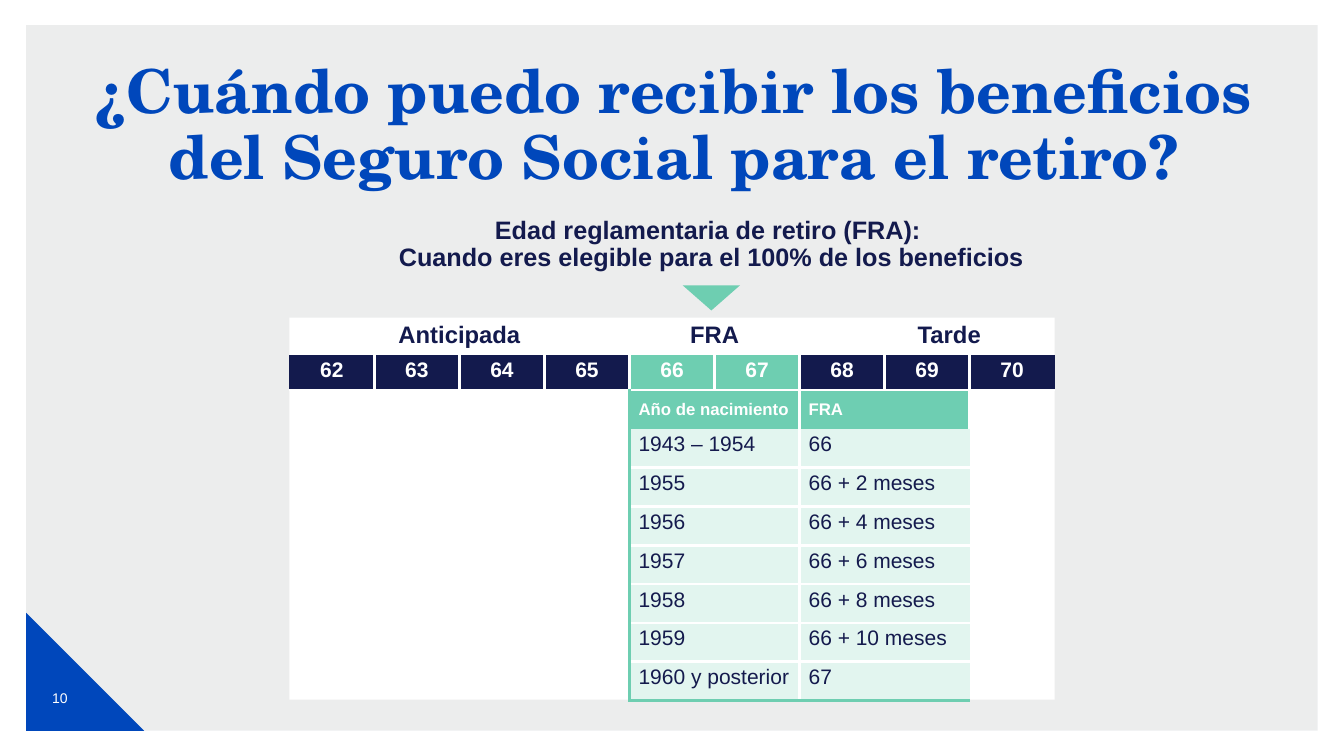
import pptx
import pptx.util
import pptx.dml.color
import pptx.enum.shapes
import pptx.enum.text
import pptx.oxml.ns
import lxml.etree

Inches = pptx.util.Inches
Pt = pptx.util.Pt
RGBColor = pptx.dml.color.RGBColor
Shape = pptx.enum.shapes.MSO_SHAPE
Align = pptx.enum.text.PP_ALIGN
Anchor = pptx.enum.text.MSO_ANCHOR
qn = pptx.oxml.ns.qn

BLUE = RGBColor(0x00, 0x47, 0xBB)
NAVY = RGBColor(0x13, 0x1A, 0x4D)
INK = RGBColor(0x14, 0x1A, 0x4D)
GREEN = RGBColor(0x6E, 0xCE, 0xB1)
HEAD = RGBColor(0x6E, 0xCE, 0xB2)
MINT = RGBColor(0xE2, 0xF5, 0xEF)
GREY = RGBColor(0xD0, 0xD3, 0xD4)
WHITE = RGBColor(0xFF, 0xFF, 0xFF)

AGES = range(62, 71)
FULL = (66, 67)
BIRTHS = [
    ("1943 – 1954", "66"),
    ("1955", "66 + 2 meses"),
    ("1956", "66 + 4 meses"),
    ("1957", "66 + 6 meses"),
    ("1958", "66 + 8 meses"),
    ("1959", "66 + 10 meses"),
    ("1960 y posterior", "67"),
]


def apply(item, values):
    for key, value in values.items():
        setattr(item, key, value)


class Deck:
    font = "Arial"
    serif = "TeX Gyre Schola"
    rule = Pt(2.25)

    def __init__(self):
        self.file = pptx.Presentation()
        apply(self.file, {"slide_width": Inches(13.33), "slide_height": Inches(7.5)})
        self.slide = self.file.slides.add_slide(self.file.slide_layouts[5])

    def words(self, frame, text, size, color, bold=True, name=None, align=Align.CENTER, space=None):
        frame.text = text
        for para in frame.paragraphs:
            apply(para, {"alignment": align, "line_spacing": space})
            for run in para.runs:
                apply(run.font, {"name": name or self.font, "size": Pt(size), "bold": bold})
                run.font.color.rgb = color

    def frame(self, frame, anchor, side=0):
        apply(frame, {
            "word_wrap": True,
            "auto_size": pptx.enum.text.MSO_AUTO_SIZE.NONE,
            "vertical_anchor": anchor,
            "margin_left": Inches(side),
            "margin_right": Inches(side),
            "margin_top": Inches(0.05),
            "margin_bottom": Inches(0.05),
        })

    def title(self, text, x, y, w, h):
        box = self.slide.shapes.title
        apply(box, {"left": Inches(x), "top": Inches(y), "width": Inches(w), "height": Inches(h)})
        self.slide.shapes.element.append(box.element)
        self.frame(box.text_frame, Anchor.TOP)
        self.words(box.text_frame, text, 43.2, BLUE, name=self.serif, space=0.9)

    def text(self, text, x, y, w, h, size, color, bold=True, anchor=Anchor.TOP, side=0, space=None):
        box = self.slide.shapes.add_textbox(Inches(x), Inches(y), Inches(w), Inches(h))
        self.frame(box.text_frame, anchor, side)
        self.words(box.text_frame, text, size, color, bold, space=space)

    def shape(self, kind, x, y, w, h, color, alpha=None, turn=0):
        item = self.slide.shapes.add_shape(kind, Inches(x), Inches(y), Inches(w), Inches(h))
        item.shadow.inherit = False
        item.rotation = turn
        item.fill.solid()
        item.fill.fore_color.rgb = color
        item.line.fill.background()
        if alpha:
            tint = item.element.spPr.find(qn("a:solidFill"))[0]
            lxml.etree.SubElement(tint, qn("a:alpha"), val=str(alpha * 1000))

    def line(self, x1, y1, x2, y2, color):
        kind = pptx.enum.shapes.MSO_CONNECTOR.STRAIGHT
        item = self.slide.shapes.add_connector(kind, Inches(x1), Inches(y1), Inches(x2), Inches(y2))
        item.line.color.rgb = color
        item.line.width = self.rule
        lxml.etree.SubElement(item.element.spPr, qn("a:effectLst"))

    def table(self, x, y, widths, heights):
        item = self.slide.shapes.add_table(
            len(heights), len(widths), Inches(x), Inches(y), Inches(sum(widths)), Inches(sum(heights)))
        self.grid = item.table
        apply(self.grid, {"first_row": False, "horz_banding": False})
        for col, width in zip(self.grid.columns, widths):
            col.width = Inches(width)
        for row, height in zip(self.grid.rows, heights):
            row.height = Inches(height)

    def edge(self, cell, sides):
        props = cell._tc.get_or_add_tcPr()
        for side in "LRTB":
            line = lxml.etree.SubElement(props, qn("a:ln" + side), w=str(int(self.rule)))
            if side in sides:
                fill = lxml.etree.SubElement(line, qn("a:solidFill"))
                lxml.etree.SubElement(fill, qn("a:srgbClr"), val=str(sides[side]))
            else:
                lxml.etree.SubElement(line, qn("a:noFill"))

    def cell(self, row, col, text="", rows=1, cols=1, fill=None, sides={}, size=15, color=WHITE,
             bold=True, align=Align.CENTER, anchor=Anchor.TOP, pad=0.04, left=0.09):
        first = self.grid.cell(row, col)
        if rows * cols > 1:
            first.merge(self.grid.cell(row + rows - 1, col + cols - 1))
        for r in range(row, row + rows):
            for c in range(col, col + cols):
                part = self.grid.cell(r, c)
                self.edge(part, sides)
                apply(part, {
                    "margin_left": Inches(left),
                    "margin_right": Inches(0.09),
                    "margin_top": Inches(pad),
                    "margin_bottom": Inches(pad),
                    "vertical_anchor": anchor,
                })
                if fill:
                    part.fill.solid()
                    part.fill.fore_color.rgb = fill
                else:
                    part.fill.background()
        if text:
            self.words(first.text_frame, text, size, color, bold, align=align)


def main():
    deck = Deck()
    deck.shape(Shape.RECTANGLE, 0.26, 0.25, 12.81, 7, GREY, alpha=40)
    deck.shape(Shape.RIGHT_TRIANGLE, 0.26, 6.08, 1.17, 1.17, BLUE)
    deck.text("10", 0.32, 6.63, 0.55, 0.58, 10, WHITE, False, Anchor.MIDDLE, 0.1)
    deck.shape(Shape.RECTANGLE, 2.87, 3.15, 7.59, 3.79, WHITE)
    deck.title("¿Cuándo puedo recibir los beneficios del Seguro Social para el retiro?",
               0.77, 0.56, 11.83, 1.3)

    deck.table(2.87, 3.15, [7.59 / len(AGES)] * len(AGES), [0.37, 0.35] + [0.36] * (len(BIRTHS) + 1))
    for col, span, text, left in ((0, 4, "Anticipada", 0.09), (4, 2, "FRA", 0.09), (6, 3, "Tarde", 0.53)):
        deck.cell(0, col, text, cols=span, size=17, color=NAVY, left=left)
    for col, age in enumerate(AGES):
        sides = {"B": WHITE}
        if col > 0:
            sides["L"] = WHITE
        if age != AGES[-1]:
            sides["R"] = WHITE
        deck.cell(1, col, str(age), fill=GREEN if age in FULL else NAVY, sides=sides)

    deck.cell(2, 0, rows=len(BIRTHS) + 1, cols=4, sides={"T": WHITE, "R": GREEN})
    for row, pair in enumerate([("Año de nacimiento", "FRA")] + BIRTHS):
        head = row == 0
        style = {"fill": HEAD, "size": 12, "anchor": Anchor.MIDDLE, "pad": 0} if head else {
            "fill": MINT, "color": INK, "bold": False}
        sides = {} if row == 1 else {"T": WHITE}
        if not head:
            sides["B"] = GREEN if row == len(BIRTHS) else WHITE
        for col, text, left in zip((4, 6), pair, (GREEN, WHITE)):
            edges = {**sides, "L": left}
            if head or col == 4:
                edges["R"] = WHITE
            deck.cell(row + 2, col, text, cols=2, sides=edges, align=Align.LEFT, **style)
        deck.cell(row + 2, 8, sides={"L": WHITE, "T": WHITE} if head else {})

    deck.text("Edad reglamentaria de retiro (FRA): \vCuando eres elegible para el 100% de los beneficios",
              3.87, 2.11, 6.37, 0.8, 18, NAVY, space=0.9)
    deck.shape(Shape.ISOSCELES_TRIANGLE, 6.77, 2.83, 0.57, 0.25, GREEN, turn=180)
    deck.line(6.24, 3.9, 6.24, 6.95, GREEN)
    deck.file.save("out.pptx")


if __name__ == "__main__":
    main()
